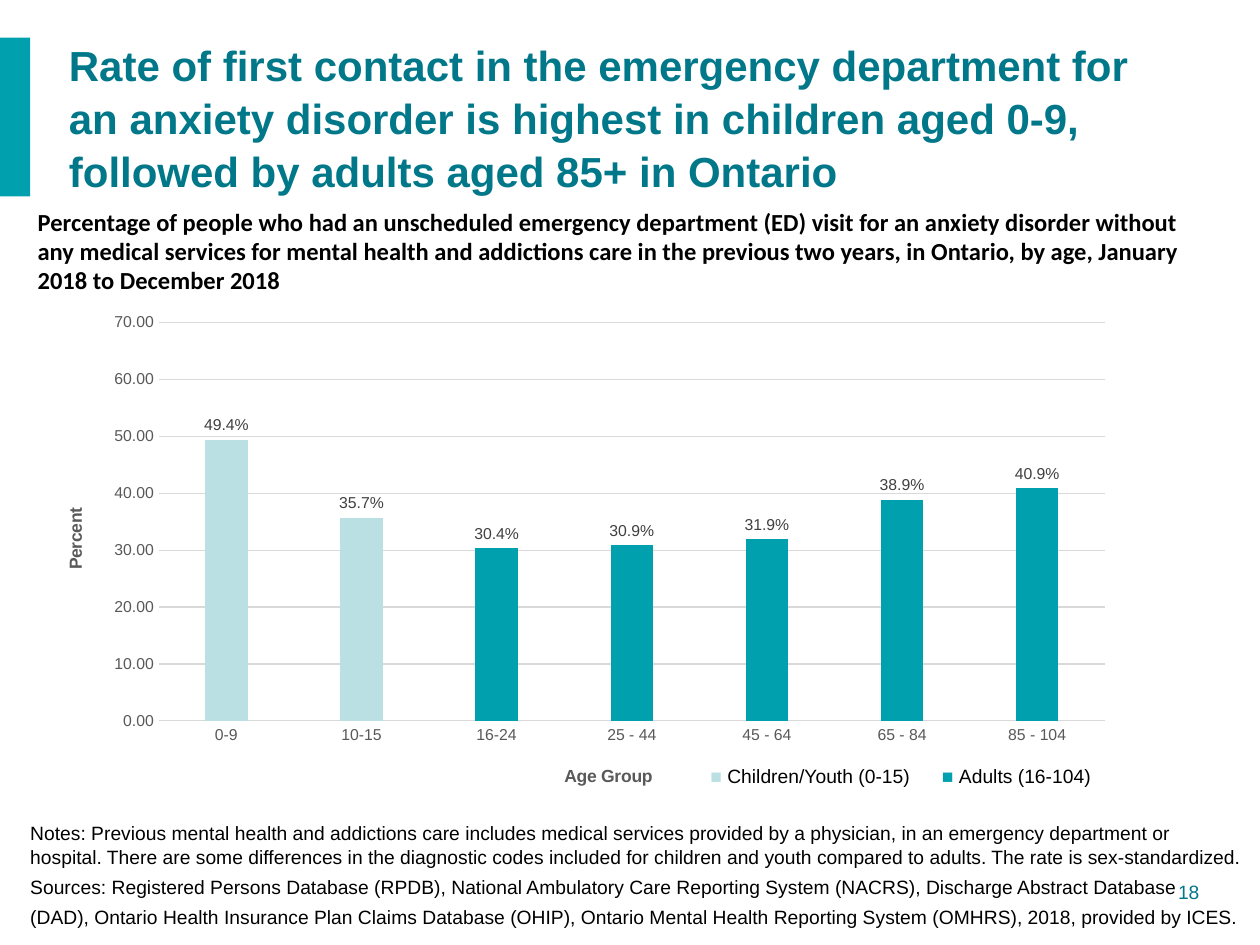
"""Build the slide on first emergency department contact for an anxiety disorder."""
from lxml.etree import SubElement
from pptx import Presentation
from pptx.chart.data import CategoryChartData as ChartData
from pptx.dml.color import RGBColor
from pptx.enum.chart import XL_CHART_TYPE as ChartType
from pptx.enum.chart import XL_LABEL_POSITION as LabelPosition
from pptx.enum.chart import XL_TICK_MARK as TickMark
from pptx.enum.shapes import MSO_SHAPE as Preset
from pptx.enum.text import MSO_ANCHOR as Anchor
from pptx.enum.text import PP_ALIGN as Align
from pptx.oxml import parse_xml
from pptx.oxml.ns import nsdecls, qn
from pptx.util import Cm, Pt

TEAL = RGBColor(0x00, 0xA0, 0xAF)
DARK_TEAL = RGBColor(0x00, 0x78, 0x8A)
PALE_TEAL = RGBColor(0xBB, 0xE0, 0xE3)
BLACK = RGBColor(0x00, 0x00, 0x00)
GREY = RGBColor(0x59, 0x59, 0x59)
LABEL_GREY = RGBColor(0x40, 0x40, 0x40)
GRID_GREY = RGBColor(0xD9, 0xD9, 0xD9)

TITLE = ("Rate of first contact in the emergency department for an anxiety disorder "
         "is highest in children aged 0-9, followed by adults aged 85+ in Ontario")
SUBTITLE = ("Percentage of people who had an unscheduled emergency department (ED) visit for an "
            "anxiety disorder without any medical services for mental health and addictions care "
            "in the previous two years, in Ontario, by age, January 2018 to December 2018")
NOTES = [
    "Notes: Previous mental health and addictions care includes medical services provided by a "
    "physician, in an emergency department or hospital. There are some differences in the "
    "diagnostic codes included for children and youth compared to adults. The rate is "
    "sex-standardized.",
    "Sources: Registered Persons Database (RPDB), National Ambulatory Care Reporting System "
    "(NACRS), Discharge Abstract Database",
    "(DAD), Ontario Health Insurance Plan Claims Database (OHIP), Ontario Mental Health "
    "Reporting System (OMHRS), 2018, provided by ICES.",
]
RATES = {"0-9": 49.4, "10-15": 35.7, "16-24": 30.4, "25 - 44": 30.9,
         "45 - 64": 31.9, "65 - 84": 38.9, "85 - 104": 40.9}
YOUTH_GROUPS = 2


def style_font(font, size, color, **values):
    font.color.rgb = color
    for name, value in ({"size": Pt(size), "name": "Arial", "bold": False} | values).items():
        setattr(font, name, value)


def place_in_chart(element, target, **fractions):
    for old in element.findall(qn("c:layout")):
        element.remove(old)
    layout = parse_xml(f"<c:layout {nsdecls('c')}><c:manualLayout/></c:layout>")
    modes = {"layoutTarget": target} if target else {}
    modes |= {"xMode": "edge", "yMode": "edge"} | fractions
    for name, value in modes.items():
        SubElement(layout[0], qn(f"c:{name}")).set("val", str(value))
    text = element.find(qn("c:tx"))
    element.insert(0 if text is None else 1, layout)


presentation = Presentation()
presentation.slide_width, presentation.slide_height = Cm(25.4), Cm(19.05)
slide = presentation.slides.add_slide(presentation.slide_layouts[6])

accent = slide.shapes.add_shape(Preset.RECTANGLE, Cm(0), Cm(0.76), Cm(0.61), Cm(3.2))
accent.shadow.inherit = False
accent.fill.solid()
accent.fill.fore_color.rgb = TEAL
accent.line.fill.background()

text_blocks = [
    ((21.46, 17.6, 2.97, 0.74), ["18"], {"size": 11, "color": DARK_TEAL},
     {"alignment": Align.RIGHT}, Anchor.MIDDLE),
    ((0.36, 16.41, 25.04, 2.41), NOTES, {"size": 11, "color": BLACK},
     {"space_before": Pt(3.3), "line_spacing": 1.05}, Anchor.TOP),
    ((0.51, 4.04, 23.55, 2.06), [SUBTITLE],
     {"size": 14, "color": BLACK, "name": "Calibri", "bold": True}, {}, Anchor.TOP),
    ((1.14, 0.69, 22.58, 3.33), [TITLE], {"size": 24, "color": DARK_TEAL, "bold": True},
     {"line_spacing": 1.05}, Anchor.MIDDLE),
]
for position, texts, font_format, paragraph_format, anchor in text_blocks:
    frame = slide.shapes.add_textbox(*map(Cm, position)).text_frame
    frame.word_wrap = True
    frame.vertical_anchor = anchor
    frame.text = "\n".join(texts)
    for paragraph in frame.paragraphs:
        style_font(paragraph.runs[0].font, **font_format)
        for name, value in paragraph_format.items():
            setattr(paragraph, name, value)

chart_data = ChartData(number_format="0.0")
chart_data.categories = list(RATES)
chart_data.add_series("Series 1", list(RATES.values()))
chart = slide.shapes.add_chart(ChartType.COLUMN_CLUSTERED, Cm(0.79), Cm(6.1),
                               Cm(21.92), Cm(10.16), chart_data).chart
chart.has_title = chart.has_legend = False
style_font(chart.font, 10, BLACK)

plot = chart.plots[0]
for name, value in {"gap_width": 219, "overlap": -27, "vary_by_categories": False,
                    "has_data_labels": True}.items():
    setattr(plot, name, value)
for name, value in {"number_format": '0.0"%"', "number_format_is_linked": False,
                    "show_value": True, "position": LabelPosition.OUTSIDE_END}.items():
    setattr(plot.data_labels, name, value)
style_font(plot.data_labels.font, 9, LABEL_GREY)

series = plot.series[0]
series.format.fill.solid()
series.format.fill.fore_color.rgb = PALE_TEAL
for index in range(YOUTH_GROUPS, len(RATES)):
    fill = series.points[index].format.fill
    fill.solid()
    fill.fore_color.rgb = TEAL

category_axis, value_axis = chart.category_axis, chart.value_axis
for axis, title, left, top in [(category_axis, "Age Group", 0.48, 0.91),
                               (value_axis, "Percent", 0.02, 0.4)]:
    axis.major_tick_mark = axis.minor_tick_mark = TickMark.NONE
    style_font(axis.tick_labels.font, 9, GREY)
    title_frame = axis.axis_title.text_frame
    title_frame.text = title
    style_font(title_frame.paragraphs[0].runs[0].font, 10, GREY, bold=True)
    place_in_chart(axis.axis_title._element, None, x=left, y=top)
place_in_chart(chart._chartSpace.chart.plotArea, "inner", x=0.11, y=0.04, w=0.87, h=0.79)

value_axis.minimum_scale, value_axis.maximum_scale, value_axis.major_unit = 0, 70, 10
value_axis.tick_labels.number_format = "####0.00"
value_axis.tick_labels.number_format_is_linked = False
value_axis.format.line.fill.background()
value_axis.has_major_gridlines = True
for line in (category_axis.format.line, value_axis.major_gridlines.format.line):
    line.color.rgb = GRID_GREY
    line.width = Pt(0.75)

legend_frame = slide.shapes.add_textbox(Cm(14.07), Cm(15.29), Cm(9.32), Cm(0.71)).text_frame
legend_frame.word_wrap = True
legend = legend_frame.paragraphs[0]
for text, color in [("■ ", PALE_TEAL), ("Children/Youth (0-15)\t", BLACK),
                    ("■ ", TEAL), ("Adults (16-104)", BLACK)]:
    run = legend.add_run()
    run.text = text
    style_font(run.font, 11, color)
tab_stops = SubElement(legend._p.get_or_add_pPr(), qn("a:tabLst"))
SubElement(tab_stops, qn("a:tab"), pos=str(Cm(4.67)), algn="l")

presentation.save("out.pptx")
